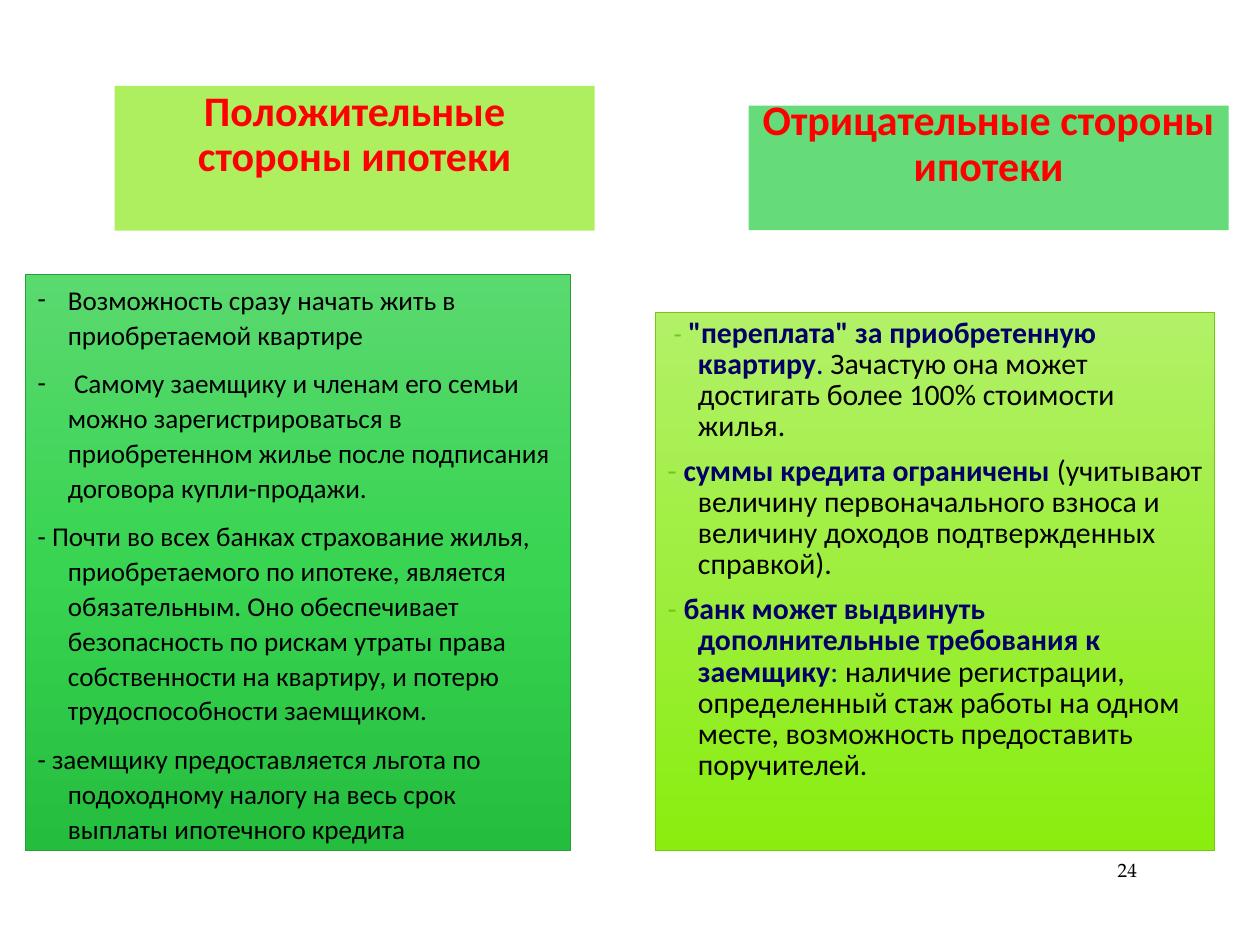
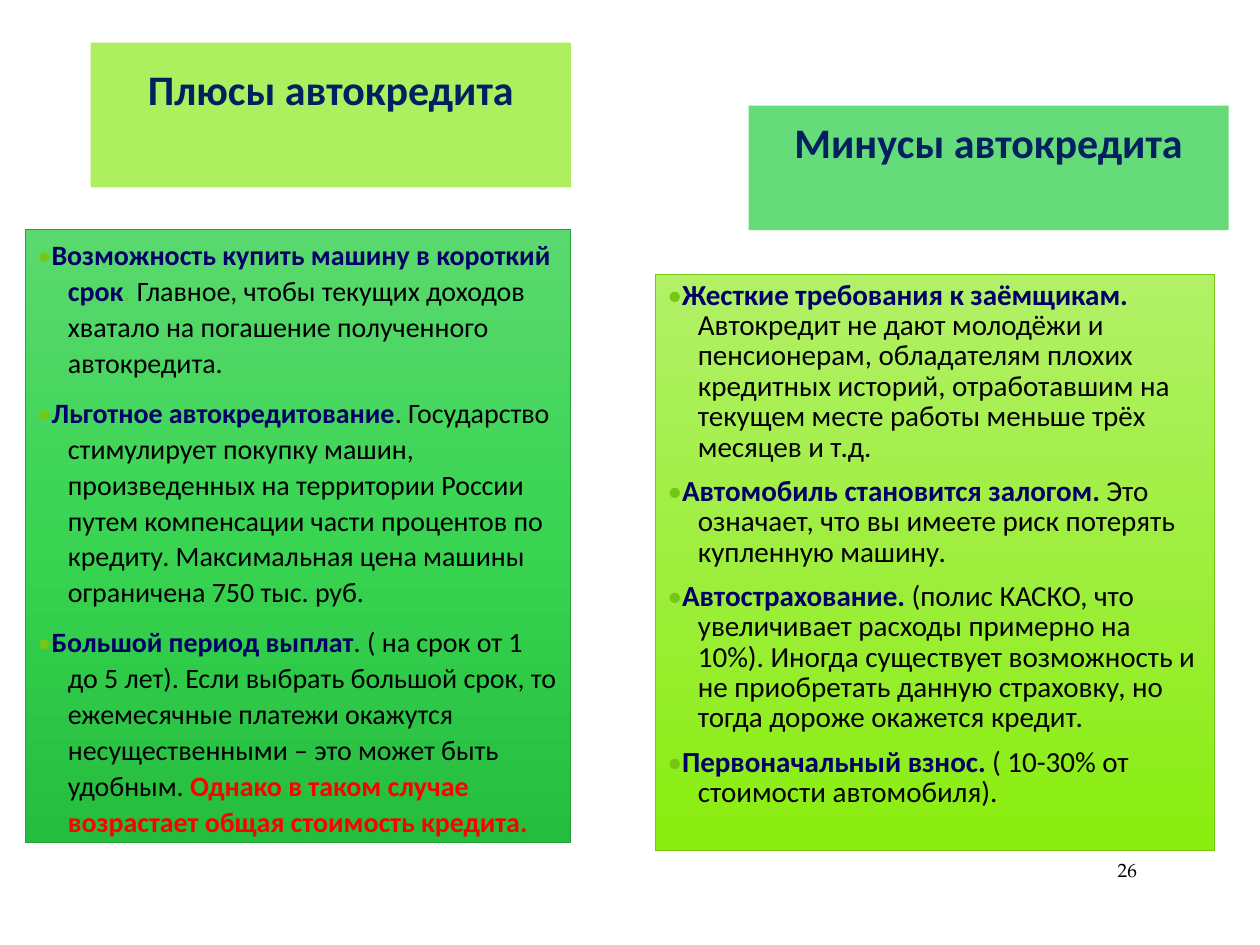
from collections import namedtuple
from copy import deepcopy

from pptx import Presentation
from pptx.dml.color import RGBColor
from pptx.enum.shapes import MSO_SHAPE as Shape
from pptx.enum.text import MSO_ANCHOR as Anchor, PP_ALIGN as Align
from pptx.oxml.ns import qn
from pptx.util import Cm, Pt

RED = RGBColor(0xFF, 0x00, 0x00)
BLACK = RGBColor(0x00, 0x00, 0x00)
NAVY = RGBColor(0x00, 0x20, 0x60)
INDIGO = RGBColor(0x00, 0x00, 0x66)
LEAF = RGBColor(0x76, 0xC7, 0x14)
FOREST = RGBColor(0x25, 0x9F, 0x39)
PALE_LIME = RGBColor(0xAE, 0xEF, 0x60)
MINT = RGBColor(0x66, 0xDB, 0x79)
GREENS = [RGBColor(0x5A, 0xD9, 0x6F), RGBColor(0x39, 0xD4, 0x52), RGBColor(0x24, 0xBD, 0x3D)]
LIMES = [RGBColor(0xB2, 0xF1, 0x67), RGBColor(0x9E, 0xEE, 0x3E), RGBColor(0x89, 0xEE, 0x0E)]

TEXT_FONT = "Calibri"
NUMBER_FONT = "TeX Gyre Pagella"
HANGING = Cm(0.61)
HEADING_WIDTH = 9.68
HEADING_SPARE_LINE = Cm(1.06)

Style = namedtuple("Style", "color bold size", defaults=(False, None))
Panel = namedtuple("Panel", "left width colors border spacing")

PLAIN = Style(BLACK)
KEY = Style(INDIGO, True)
MARK = Style(LEAF)
SMALL_MARK = Style(LEAF, False, 15.3)
WARNING = Style(RED, True)

PROS = Panel(0.51, 11, GREENS, FOREST, 1.07)
CONS = Panel(13.21, 11.28, LIMES, LEAF, 0.87)

MORTGAGE_PROS = [
    [("Возможность сразу начать жить в приобретаемой квартире", PLAIN)],
    [(" Самому заемщику и членам его семьи можно зарегистрироваться в приобретенном "
      "жилье после подписания договора купли-продажи.", PLAIN)],
    [("- Почти во всех банках страхование жилья, приобретаемого по ипотеке, является "
      "обязательным. Оно обеспечивает безопасность по рискам утраты права собственности "
      "на квартиру, и потерю трудоспособности заемщиком.", PLAIN)],
    [("- заемщику предоставляется льгота по подоходному налогу на весь срок выплаты "
      "ипотечного кредита", PLAIN)],
]
MORTGAGE_CONS = [
    [(" - ", SMALL_MARK), ("\"переплата\" за приобретенную квартиру", KEY),
     (". ", Style(INDIGO)),
     ("Зачастую она может достигать более 100% стоимости жилья.", PLAIN)],
    [("- ", MARK), ("суммы кредита ограничены ", KEY),
     ("(учитывают величину первоначального взноса и величину доходов подтвержденных "
      "справкой).", PLAIN)],
    [("- ", MARK), ("банк может выдвинуть дополнительные требования к заемщику", KEY),
     (": ", Style(NAVY)),
     ("наличие регистрации, определенный стаж работы на одном месте, возможность "
      "предоставить поручителей.", PLAIN)],
]
CAR_LOAN_PROS = [
    [("•", MARK), ("Возможность купить машину в короткий срок", KEY), (". ", MARK),
     ("Главное, чтобы текущих доходов хватало на погашение полученного автокредита.", PLAIN)],
    [("•", MARK), ("Льготное автокредитование", KEY),
     (". Государство стимулирует покупку машин, произведенных на территории России путем "
      "компенсации части процентов по кредиту. Максимальная цена машины ограничена "
      "750 тыс. руб.", PLAIN)],
    [("•", MARK), ("Большой период выплат", KEY),
     (". ( на срок от 1 до 5 лет). Если выбрать большой срок, то ежемесячные платежи "
      "окажутся несущественными – это может быть удобным. ", PLAIN),
     ("Однако в таком случае возрастает общая стоимость кредита.", WARNING)],
]
CAR_LOAN_CONS = [
    [("•", MARK), ("Жесткие требования к заёмщикам. ", KEY),
     ("Автокредит не дают молодёжи и пенсионерам, обладателям плохих кредитных историй, "
      "отработавшим на текущем месте работы меньше трёх месяцев и т.д.", PLAIN)],
    [("•", MARK), ("Автомобиль становится залогом. ", KEY),
     ("Это означает, что вы имеете риск потерять купленную машину.", PLAIN)],
    [("•", MARK), ("Автострахование. ", KEY),
     ("(полис КАСКО, что увеличивает расходы примерно на 10%). Иногда существует "
      "возможность и не приобретать данную страховку, но тогда дороже окажется кредит.", PLAIN)],
    [("•", MARK), ("Первоначальный взнос. ", KEY),
     ("( 10-30% от стоимости автомобиля).", PLAIN)],
]


def format_run(run, font_name, size, color, bold=False):
    """Set the typeface, size, colour and weight of a run."""
    run.font.name = font_name
    run.font.size = Pt(size)
    run.font.color.rgb = color
    run.font.bold = bold


def add_box(slide, left, top, width, height):
    """Add a shadowless rectangle with wrapped text, measured in centimetres."""
    box = slide.shapes.add_shape(Shape.RECTANGLE, Cm(left), Cm(top), Cm(width), Cm(height))
    box.shadow.inherit = False
    box.text_frame.word_wrap = True
    return box


def add_heading(slide, left, top, height, fill, text, color):
    """Add a flat heading band whose text sits one line above the middle area."""
    band = add_box(slide, left, top, HEADING_WIDTH, height)
    band.fill.solid()
    band.fill.fore_color.rgb = fill
    band.line.fill.background()
    frame = band.text_frame
    frame.vertical_anchor = Anchor.MIDDLE
    frame.margin_bottom = HEADING_SPARE_LINE
    frame.text = text
    title = frame.paragraphs[0]
    title.alignment = Align.CENTER
    title.line_spacing = 0.9
    format_run(title.runs[0], TEXT_FONT, 24, color, True)


def fill_gradient(box, colors):
    """Fill a box from top to bottom with evenly spaced colours."""
    box.fill.gradient()
    box.fill.gradient_angle = 270
    stop_list = box.fill._xPr.find(qn("a:gradFill")).find(qn("a:gsLst"))
    while len(stop_list) < len(colors):
        stop_list.append(deepcopy(stop_list[0]))
    for index, (stop, color) in enumerate(zip(box.fill.gradient_stops, colors)):
        stop.color.rgb = color
        stop.position = index / (len(colors) - 1)


def set_hanging(paragraph, dashed):
    """Give a paragraph a hanging indent and, if asked, a dash bullet."""
    properties = paragraph._p.get_or_add_pPr()
    properties.set("marL", str(HANGING))
    properties.set("indent", str(-HANGING))
    if dashed:
        font = properties.makeelement(qn("a:buFont"), {"typeface": TEXT_FONT})
        dash = properties.makeelement(qn("a:buChar"), {"char": "-"})
        properties.extend([font, dash])


def add_arguments(slide, panel, top, height, arguments, size, dashed=0):
    """Add a gradient panel of arguments, the first few with dash bullets."""
    box = add_box(slide, panel.left, top, panel.width, height)
    fill_gradient(box, panel.colors)
    box.line.color.rgb = panel.border
    box.line.width = Pt(0.5)
    frame = box.text_frame
    frame.vertical_anchor = Anchor.TOP
    for index, argument in enumerate(arguments):
        paragraph = frame.add_paragraph() if index else frame.paragraphs[0]
        paragraph.alignment = Align.LEFT
        paragraph.line_spacing = panel.spacing
        paragraph.space_after = Pt(8)
        set_hanging(paragraph, index < dashed)
        for text, style in argument:
            run = paragraph.add_run()
            run.text = text
            format_run(run, TEXT_FONT, style.size or size, style.color, style.bold)


def add_page_number(slide, number):
    """Add the page number at the lower right."""
    frame = slide.shapes.add_textbox(Cm(21.11), Cm(17.15), Cm(2.06), Cm(0.76)).text_frame
    frame.word_wrap = True
    frame.vertical_anchor = Anchor.MIDDLE
    frame.text = str(number)
    frame.paragraphs[0].alignment = Align.RIGHT
    format_run(frame.paragraphs[0].runs[0], NUMBER_FONT, 11, BLACK)


def add_comparison(deck, number, pros_title, cons_title, title_color, pros_corner):
    """Add a slide with its two headings and page number."""
    slide = deck.slides.add_slide(deck.slide_layouts[6])
    add_heading(slide, *pros_corner, 2.92, PALE_LIME, pros_title, title_color)
    add_heading(slide, 15.09, 2.13, 2.51, MINT, cons_title, title_color)
    add_page_number(slide, number)
    return slide


def main():
    """Build the mortgage and car loan comparison slides."""
    deck = Presentation()
    deck.slide_width, deck.slide_height = Cm(25.4), Cm(19.05)

    mortgage = add_comparison(deck, 24, "Положительные стороны ипотеки",
                              "Отрицательные стороны ипотеки", RED, (2.31, 1.73))
    add_arguments(mortgage, PROS, 5.54, 11.61, MORTGAGE_PROS, 15.5, dashed=2)
    add_arguments(mortgage, CONS, 6.3, 10.85, MORTGAGE_CONS, 17)

    car_loan = add_comparison(deck, 26, "Плюсы автокредита",
                              "Минусы автокредита", NAVY, (1.83, 0.86))
    add_arguments(car_loan, PROS, 4.62, 12.37, CAR_LOAN_PROS, 16)
    add_arguments(car_loan, CONS, 5.54, 11.61, CAR_LOAN_CONS, 16.6)

    deck.save("out.pptx")


if __name__ == "__main__":
    main()
